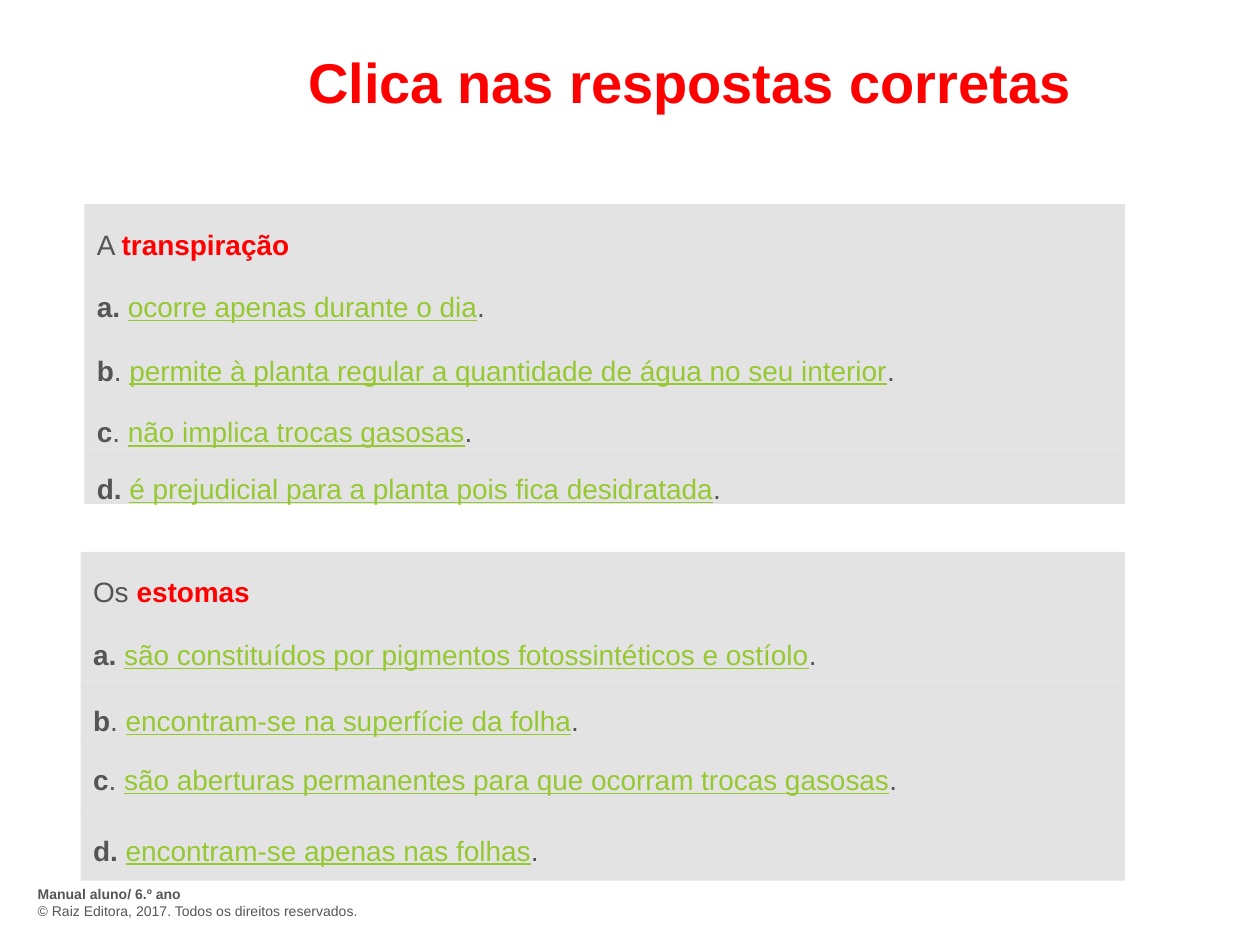
import dataclasses

import pptx
import pptx.dml.color
import pptx.enum.shapes
import pptx.enum.text
import pptx.oxml.ns
import pptx.util
from lxml import etree

COLS, ROWS = 100, 75


@dataclasses.dataclass(frozen=True)
class Theme:
    font: str = "Arial"
    text: str = "555555"
    accent: str = "FF0000"
    answer: str = "96C832"
    panel: str = "DDDDDD"
    panel_alpha: int = 80
    title_size: int = 32
    body_size: int = 16
    footer_size: int = 8
    spacing: float = 1.5
    option_gap: float = 6.9


THEME = Theme()
ALIGN = pptx.enum.text.PP_ALIGN
ANCHOR = pptx.enum.text.MSO_ANCHOR


def rgb(color):
    return pptx.dml.color.RGBColor.from_string(color)


def grid(prs, box):
    x, y, w, h = box
    col, row = prs.slide_width / COLS, prs.slide_height / ROWS
    return [round(v) for v in (x * col, y * row, w * col, h * row)]


def style(p, size, color, bold=None):
    p.font.name = THEME.font
    p.font.size = pptx.util.Pt(size)
    p.font.color.rgb = rgb(color)
    p.font.bold = bold


def add_run(p, text, color=None, bold=None, underline=None):
    r = p.add_run()
    r.text = text
    r.font.bold = bold
    r.font.underline = underline
    if color:
        r.font.color.rgb = rgb(color)


def add_text(prs, s, box):
    tf = s.shapes.add_textbox(*grid(prs, box)).text_frame
    tf.word_wrap = True
    return tf


def add_title(prs, s, box, text):
    tf = add_text(prs, s, box)
    tf.vertical_anchor = ANCHOR.MIDDLE
    p = tf.paragraphs[0]
    p.text = text
    p.alignment = ALIGN.CENTER
    style(p, THEME.title_size, THEME.accent, True)


def add_footer(prs, s, box, course, rights):
    tf = add_text(prs, s, box)
    for p, text, bold in ((tf.paragraphs[0], course, True),
                          (tf.add_paragraph(), rights, False)):
        p.text = text
        style(p, THEME.footer_size, THEME.text, bold)


def add_band(prs, s, box):
    sp = s.shapes.add_shape(
        pptx.enum.shapes.MSO_SHAPE.RECTANGLE, *grid(prs, box))
    sp.shadow.inherit = False
    sp.line.fill.background()
    sp.fill.solid()
    sp.fill.fore_color.rgb = rgb(THEME.panel)
    color = sp.fill._xPr.find(".//" + pptx.oxml.ns.qn("a:srgbClr"))
    alpha = etree.SubElement(color, pptx.oxml.ns.qn("a:alpha"))
    alpha.set("val", str(THEME.panel_alpha * 1000))
    tf = sp.text_frame
    tf.word_wrap = True
    tf.vertical_anchor = ANCHOR.TOP
    return tf


def format_line(p):
    p.alignment = ALIGN.JUSTIFY
    p.line_spacing = THEME.spacing
    style(p, THEME.body_size, THEME.text)


def add_option(p, letter, answer):
    format_line(p)
    if letter in "ad":
        add_run(p, letter + ". ", bold=True)
    else:
        add_run(p, letter, bold=True)
        add_run(p, ". ")
    add_run(p, answer, THEME.answer, underline=True)
    add_run(p, ".")


def add_question(prs, s, box, heights, article, topic, answers):
    x, y, w, h = box
    unit = h / sum(heights)
    for i, (height, letter, answer) in enumerate(zip(heights, "abcd", answers)):
        tf = add_band(prs, s, (x, y, w, height * unit))
        p = tf.paragraphs[0]
        if i == 0:
            format_line(p)
            add_run(p, article + " ")
            add_run(p, topic, THEME.accent, bold=True)
            p = tf.add_paragraph()
            p.space_before = pptx.util.Pt(THEME.option_gap)
        add_option(p, letter, answer)
        y += height * unit


def main():
    prs = pptx.Presentation()
    prs.slide_width = pptx.util.Inches(10)
    prs.slide_height = pptx.util.Inches(7.5)
    s = prs.slides.add_slide(prs.slide_layouts[6])

    add_footer(prs, s, (2, 69.8, 96.1, 3.7), "Manual aluno/ 6.º ano",
               "© Raiz Editora, 2017. Todos os direitos reservados.")
    add_title(prs, s, (13, 2.1, 83.5, 8.7), "Clica nas respostas corretas")
    add_question(prs, s, (6.7, 16.2, 82.6, 23.8), (10, 4.9, 4.5, 4.4),
                 "A", "transpiração", (
        "ocorre apenas durante o dia",
        "permite à planta regular a quantidade de água no seu interior",
        "não implica trocas gasosas",
        "é prejudicial para a planta pois fica desidratada"))
    add_question(prs, s, (6.4, 43.8, 82.9, 26.1), (10.2, 4.7, 5.6, 5.6),
                 "Os", "estomas", (
        "são constituídos por pigmentos fotossintéticos e ostíolo",
        "encontram-se na superfície da folha",
        "são aberturas permanentes para que ocorram trocas gasosas",
        "encontram-se apenas nas folhas"))
    prs.save("out.pptx")


if __name__ == "__main__":
    main()
